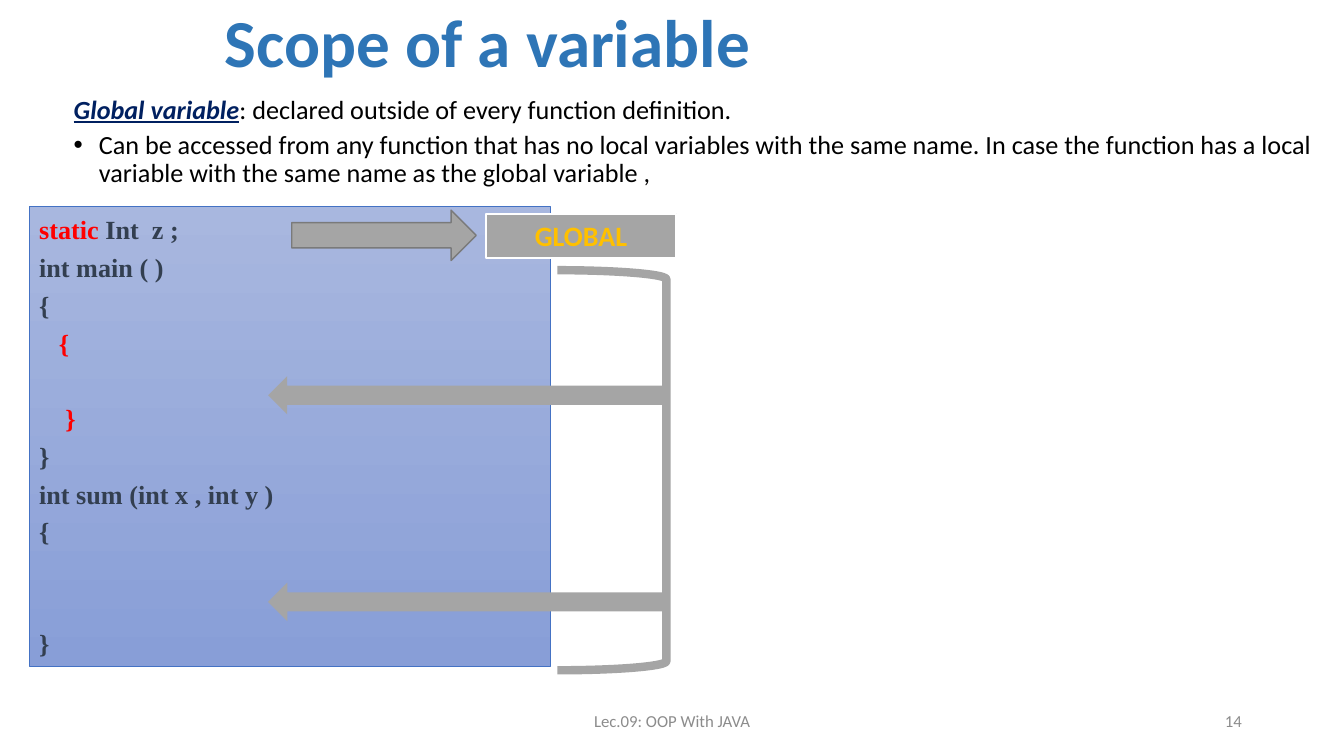
"""Build the slide on the scope of a global variable."""
from lxml.etree import SubElement
from pptx import Presentation
from pptx.dml.color import RGBColor
from pptx.enum.shapes import MSO_SHAPE as Shape
from pptx.enum.text import MSO_ANCHOR as Anchor, MSO_AUTO_SIZE as Fit, PP_ALIGN as Align
from pptx.oxml.ns import qn
from pptx.util import Pt

BLUE = RGBColor(0x2E, 0x75, 0xB6)
NAVY = RGBColor(0x00, 0x20, 0x60)
BLACK = RGBColor(0, 0, 0)
WHITE = RGBColor(255, 255, 255)
RED = RGBColor(255, 0, 0)
SLATE = RGBColor(0x33, 0x3F, 0x50)
GRAY = RGBColor(0xA5, 0xA5, 0xA5)
DARK = RGBColor(0x7A, 0x7A, 0x7A)
MUTED = RGBColor(0x8C, 0x8C, 0x8C)
GOLD = RGBColor(0xFF, 0xC0, 0x00)
EDGE = RGBColor(0x44, 0x72, 0xC4)
PALE = RGBColor(0xA8, 0xB7, 0xDF)
DEEP = RGBColor(0x88, 0x9E, 0xD7)
SANS, SERIF = "Calibri", "Times New Roman"
SIZE, PITCH, GAP = 18.7, 26.15, 4.65

TITLE = "Scope of a variable"
TERM = "Global variable"
MEANING = ": declared outside of every function definition."
RULE = ("Can be accessed from any function that has no local variables with the same name. "
        "In case the function has a local variable with the same name as the global variable ,")
CODE = [
    (0, [("static ", RED), ("Int  z ;", SLATE)]),
    (0, [("int main ( )", SLATE)]),
    (0, [("{", SLATE)]),
    (0, [("   {", RED)]),
    (1, [("    }", RED)]),
    (0, [("}", SLATE)]),
    (0, [("int sum (int x , int y )", SLATE)]),
    (0, [("{", SLATE)]),
    (2, [("}", SLATE)]),
]
LABEL = "GLOBAL"
USES = [(268.6, 285.1), (416.2, 282.2)]
FOOTER = [("Lec.09: OOP With JAVA", 318.2, 324, Align.CENTER),
          ("14", 678.2, 216, Align.RIGHT)]


def style(font, size, color, name=SANS, bold=False):
    font.size, font.name, font.bold = Pt(size), name, bold
    font.color.rgb = color


def place(item, left, top, width, height):
    item.left, item.top, item.width, item.height = map(Pt, (left, top, width, height))


def draw(kind, box, fill=None, line=None, width=1):
    shape = slide.shapes.add_shape(kind, *map(Pt, box))
    shape.shadow.inherit = False
    if fill is None:
        shape.fill.background()
    else:
        shape.fill.solid()
        shape.fill.fore_color.rgb = fill
    if line is None:
        shape.line.fill.background()
    else:
        shape.line.color.rgb = line
        shape.line.width = Pt(width)
    return shape


deck = Presentation()
deck.slide_width, deck.slide_height = Pt(960), Pt(540)
slide = deck.slides.add_slide(deck.slide_layouts[1])

title, body = slide.placeholders
place(title, 153.4, 2.9, 648, 59.8)
frame = title.text_frame
frame.text = TITLE
frame.auto_size, frame.vertical_anchor = Fit.NONE, Anchor.MIDDLE
head = frame.paragraphs[0]
head.alignment, head.line_spacing = Align.LEFT, 0.9
style(head.font, 48, BLUE, bold=True)

place(body, 9.4, 65.5, 936, 79.2)
frame = body.text_frame
frame.auto_size = Fit.NONE
intro, point = frame.paragraphs[0], frame.add_paragraph()
for para, mark in ((intro, None), (point, "•")):
    props = para._p.get_or_add_pPr()
    props.set("marL", str(Pt(54)))
    props.set("indent", str(Pt(-18)))
    bullet = SubElement(props, qn("a:buChar" if mark else "a:buNone"))
    if mark:
        bullet.set("char", mark)
    para.line_spacing, para.space_before = 0.9, Pt(5 if mark else 0)
term = intro.add_run()
term.text = TERM
style(term.font, SIZE, NAVY, bold=True)
term.font.italic = term.font.underline = True
rest = intro.add_run()
rest.text = MEANING
style(rest.font, SIZE, BLACK)
point.text = RULE
style(point.font, SIZE, BLACK)

panel = draw(Shape.RECTANGLE, (20.9, 147.6, 372.2, 328.3), PALE, EDGE, 0.5)
panel.fill.gradient()
panel.fill.gradient_angle = 270
for stop, color in zip(panel.fill.gradient_stops, (PALE, DEEP)):
    stop.color.rgb = color
frame = panel.text_frame
frame.vertical_anchor, frame.margin_top = Anchor.TOP, Pt(5)
for row, (skip, parts) in enumerate(CODE):
    para = frame.add_paragraph() if row else frame.paragraphs[0]
    para.alignment = Align.LEFT
    para.space_before = Pt(GAP + skip * PITCH if row else 0)
    for text, color in parts:
        run = para.add_run()
        run.text = text
        style(run.font, SIZE, color, SERIF, True)

draw(Shape.RIGHT_ARROW, (208.4, 150.1, 131.8, 36), GRAY, DARK)
tag = draw(Shape.RECTANGLE, (347, 152.6, 136.1, 31.7), GRAY, WHITE, 1.5)
tag.text_frame.text = LABEL
tag.text_frame.vertical_anchor = Anchor.MIDDLE
para = tag.text_frame.paragraphs[0]
para.alignment = Align.CENTER
style(para.font, 20, GOLD, bold=True)

draw(Shape.RIGHT_BRACKET, (398.2, 193, 77.8, 285.8), line=GRAY, width=6)
for top, width in USES:
    draw(Shape.LEFT_ARROW, (191.5, top, width, 27.4), GRAY)

for text, left, width, side in FOOTER:
    note = slide.shapes.add_textbox(Pt(left), Pt(500.4), Pt(width), Pt(28.8))
    frame = note.text_frame
    frame.word_wrap, frame.vertical_anchor = True, Anchor.MIDDLE
    frame.text = text
    para = frame.paragraphs[0]
    para.alignment = side
    style(para.font, 12, MUTED)

deck.save("out.pptx")
